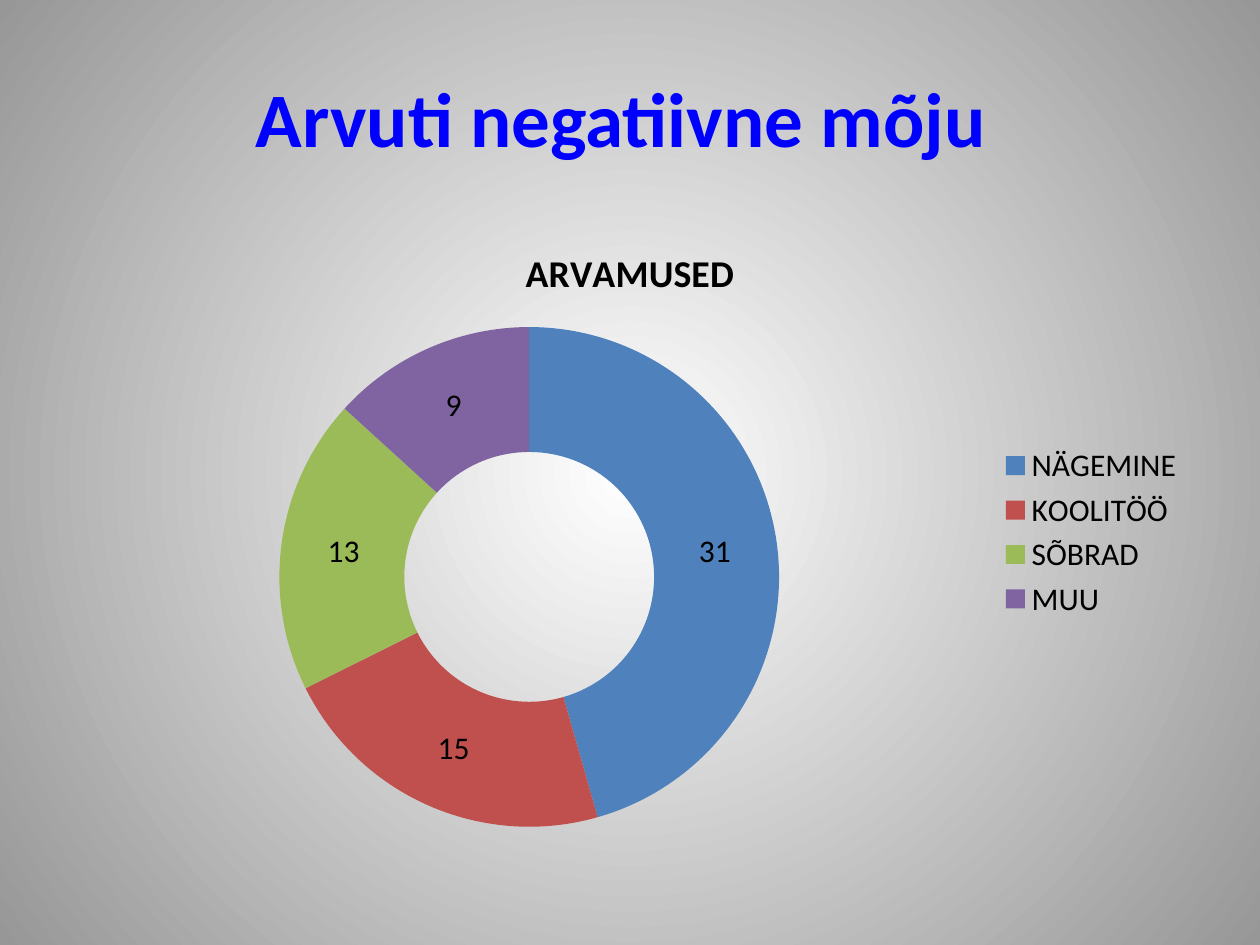
"""Build a slide with a doughnut chart of opinions on the negative effects of computers."""
from lxml import etree
from pptx import Presentation
from pptx.chart.data import CategoryChartData
from pptx.dml.color import RGBColor as RGB
from pptx.enum.chart import XL_CHART_TYPE as CT, XL_LEGEND_POSITION as LP
from pptx.enum.text import MSO_ANCHOR, PP_ALIGN
from pptx.oxml.ns import qn
from pptx.util import Pt

PX = 914400 // 100
FONT = "Calibri"
C = {"title": "0000FF", "text": "000000", "center": "FFFFFF", "edge": "979797"}
OPINIONS = [
    ("NÄGEMINE", 31, "4F81BD"),
    ("KOOLITÖÖ", 15, "C0504D"),
    ("SÕBRAD", 13, "9BBB59"),
    ("MUU", 9, "8064A2"),
]


def style(font, size, color, bold):
    font.name, font.size, font.bold = FONT, Pt(size), bold
    font.color.rgb = RGB.from_string(color)


prs = Presentation()
prs.slide_width, prs.slide_height = 1000 * PX, 750 * PX
s = prs.slides.add_slide(prs.slide_layouts[5])

fill = s.background.fill
fill.gradient()
for stop, name, pos in zip(fill.gradient_stops, ("center", "edge"), (0, 1)):
    stop.color.rgb = RGB.from_string(C[name])
    stop.position = pos
grad = s.element.find(".//" + qn("a:gradFill"))
grad.remove(grad.find(qn("a:lin")))
gs_lst = grad.find(qn("a:gsLst"))
radial = etree.Element(qn("a:path"), path="circle")
etree.SubElement(radial, qn("a:fillToRect"), {side: "50000" for side in "ltrb"})
gs_lst.addnext(radial)

title = s.shapes.title
title.left, title.top, title.width, title.height = 50 * PX, 30 * PX, 900 * PX, 125 * PX
tf = title.text_frame
tf.text = "Arvuti negatiivne mõju "
tf.vertical_anchor = MSO_ANCHOR.MIDDLE
p = tf.paragraphs[0]
p.alignment = PP_ALIGN.CENTER
style(p.runs[0].font, 44, C["title"], True)

data = CategoryChartData()
data.categories = [name for name, _, _ in OPINIONS]
data.add_series("ARVAMUSED", [value for _, value, _ in OPINIONS])
chart = s.shapes.add_chart(
    CT.DOUGHNUT, 50 * PX, 175 * PX, 900 * PX, 495 * PX, data
).chart
style(chart.font, 18, C["text"], False)

chart.has_title = True
tf = chart.chart_title.text_frame
tf.text = "ARVAMUSED"
style(tf.paragraphs[0].runs[0].font, 21.6, C["text"], True)
chart.chart_title.include_in_layout = False

chart.has_legend = True
chart.legend.position = LP.RIGHT
chart.legend.include_in_layout = False
style(chart.legend.font, 18, C["text"], False)

plot = chart.plots[0]
plot.vary_by_categories = True
plot.has_data_labels = True
labels = plot.data_labels
labels.show_value, labels.show_percentage = True, False
style(labels.font, 18, C["text"], False)
for i, (_, _, color) in enumerate(OPINIONS):
    point = plot.series[0].points[i]
    point.format.fill.solid()
    point.format.fill.fore_color.rgb = RGB.from_string(color)

prs.save("out.pptx")
